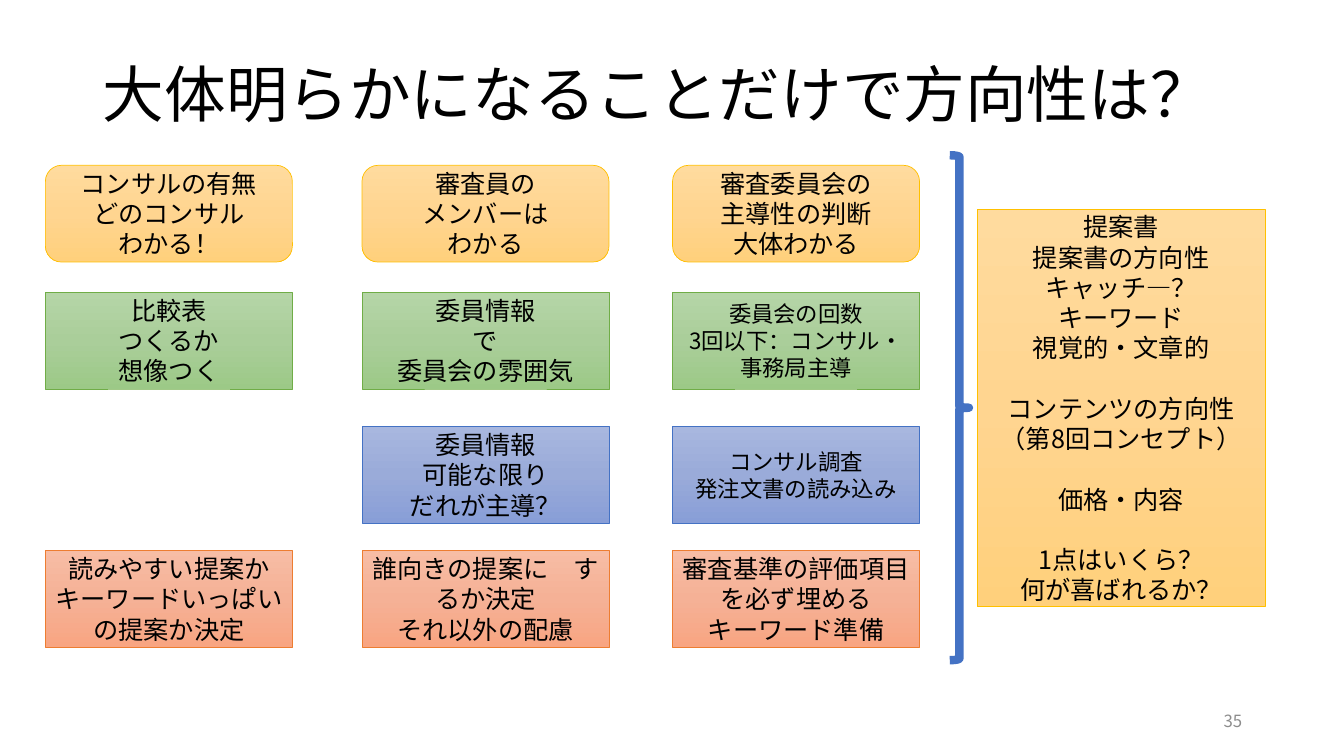
import copy

import pptx
import pptx.dml.color
import pptx.enum.shapes
import pptx.enum.text
import pptx.oxml.ns
import pptx.util

RGBColor = pptx.dml.color.RGBColor
SHAPE = pptx.enum.shapes.MSO_SHAPE
ALIGN = pptx.enum.text.PP_ALIGN
Inches = pptx.util.Inches
Pt = pptx.util.Pt
qn = pptx.oxml.ns.qn

FONT = "Noto Sans CJK JP"
BLACK = RGBColor(0x00, 0x00, 0x00)
GRAY = RGBColor(0x8C, 0x8C, 0x8C)
BLUE_LINE = RGBColor(0x44, 0x72, 0xC4)

# Line colour, then gradient from top to bottom
GOLD = (RGBColor(0xFF, 0xC0, 0x00), RGBColor(0xFF, 0xDB, 0x9E),
        RGBColor(0xFF, 0xD5, 0x90), RGBColor(0xFF, 0xD0, 0x7C))
GREEN = (RGBColor(0x70, 0xAD, 0x47), RGBColor(0xB5, 0xD5, 0xA7),
         RGBColor(0xAA, 0xCE, 0x9A), RGBColor(0x9C, 0xC9, 0x87))
BLUE = (BLUE_LINE, RGBColor(0xA8, 0xB7, 0xDF),
        RGBColor(0x9A, 0xAB, 0xD9), RGBColor(0x88, 0x9E, 0xD7))
ORANGE = (RGBColor(0xED, 0x7D, 0x31), RGBColor(0xF7, 0xBD, 0xA5),
          RGBColor(0xF5, 0xB1, 0x96), RGBColor(0xF8, 0xA5, 0x82))


def write(sp, groups, size=18, color=BLACK, align=ALIGN.CENTER, spacing=None):
    """Write groups of lines, one paragraph a line, with a line's gap between groups."""
    tf = sp.text_frame
    tf.word_wrap = True
    tf.vertical_anchor = pptx.enum.text.MSO_ANCHOR.MIDDLE
    p = tf.paragraphs[0]
    for g, lines in enumerate(groups):
        for i, line in enumerate(lines):
            if g or i:
                p = tf.add_paragraph()
            p.text = line
            p.alignment = align
            p.line_spacing = spacing or Pt(size * 1.2)
            if g and i == 0:
                p.space_before = Pt(size * 1.2)
            for r in p.runs:
                r.font.size = Pt(size)
                r.font.name = FONT
                r.font.color.rgb = color
                ea = r.font._element.makeelement(qn("a:ea"), {"typeface": FONT})
                r.font._element.find(qn("a:latin")).addnext(ea)


def add_box(kind, left, top, width, height, colors):
    sp = s.shapes.add_shape(kind, Inches(left), Inches(top), Inches(width), Inches(height))
    sp.shadow.inherit = False
    sp.line.color.rgb = colors[0]
    sp.line.width = Pt(0.5)
    sp.fill.gradient()
    sp.fill.gradient_angle = 270
    stop_list = sp._element.spPr.find(qn("a:gradFill")).find(qn("a:gsLst"))
    stop_list.insert(1, copy.deepcopy(stop_list[0]))
    for i, stop in enumerate(sp.fill.gradient_stops):
        stop.position = i / 2
        stop.color.rgb = colors[i + 1]
    return sp


prs = pptx.Presentation()
prs.slide_width = Inches(13.33)
prs.slide_height = Inches(7.5)
s = prs.slides.add_slide(prs.slide_layouts[5])

title = s.shapes.title
title.left, title.top = Inches(0.92), Inches(0.44)
title.width, title.height = Inches(11.5), Inches(1.05)
write(title, [["大体明らかになることだけで方向性は？"]], size=44, align=ALIGN.LEFT, spacing=0.9)

number = s.shapes.add_textbox(Inches(9.42), Inches(6.95), Inches(3), Inches(0.4))
write(number, [["35"]], size=12, color=GRAY, align=ALIGN.RIGHT)

COLUMNS = (0.45, 3.59, 6.67)
BOX_W, BOX_H = 2.45, 0.96

# Top, shape, colours, and the lines and text size of each column's box
ROWS = [
    (1.64, SHAPE.ROUNDED_RECTANGLE, GOLD, [
        (["コンサルの有無", "どのコンサル", "わかる！"], 18),
        (["審査員の", "メンバーは", "わかる"], 18),
        (["審査委員会の\v主導性の判断", "大体わかる"], 18)]),
    (2.9, SHAPE.RECTANGLE, GREEN, [
        (["比較表", "つくるか", "想像つく"], 18),
        (["委員情報", "で", "委員会の雰囲気"], 18),
        (["委員会の回数", "3回以下：コンサル・", "事務局主導"], 16)]),
    (4.23, SHAPE.RECTANGLE, BLUE, [
        None,
        (["委員情報", "可能な限り", "だれが主導？"], 18),
        (["コンサル調査", "発注文書の読み込み"], 16)]),
    (5.46, SHAPE.RECTANGLE, ORANGE, [
        (["読みやすい提案か", "キーワードいっぱいの提案か決定"], 18),
        (["誰向きの提案に　するか決定", "それ以外の配慮"], 18),
        (["審査基準の評価項目を必ず埋める", "キーワード準備"], 18)]),
]
for top, kind, colors, cells in ROWS:
    for left, cell in zip(COLUMNS, cells):
        if cell:
            lines, size = cell
            write(add_box(kind, left, top, BOX_W, BOX_H, colors), [lines], size=size)

brace = s.shapes.add_shape(SHAPE.RIGHT_BRACE, Inches(9.42), Inches(1.54), Inches(0.19), Inches(5.01))
brace.shadow.inherit = False
brace.fill.background()
brace.line.color.rgb = BLUE_LINE
brace.line.width = Pt(6)

proposal = add_box(SHAPE.RECTANGLE, 9.69, 2.08, 2.86, 3.94, GOLD)
write(proposal, [
    ["提案書", "提案書の方向性", "キャッチ―？", "キーワード", "視覚的・文章的"],
    ["コンテンツの方向性", "（第8回コンセプト）"],
    ["価格・内容"],
    ["1点はいくら？", "何が喜ばれるか？"],
])

prs.save("out.pptx")
